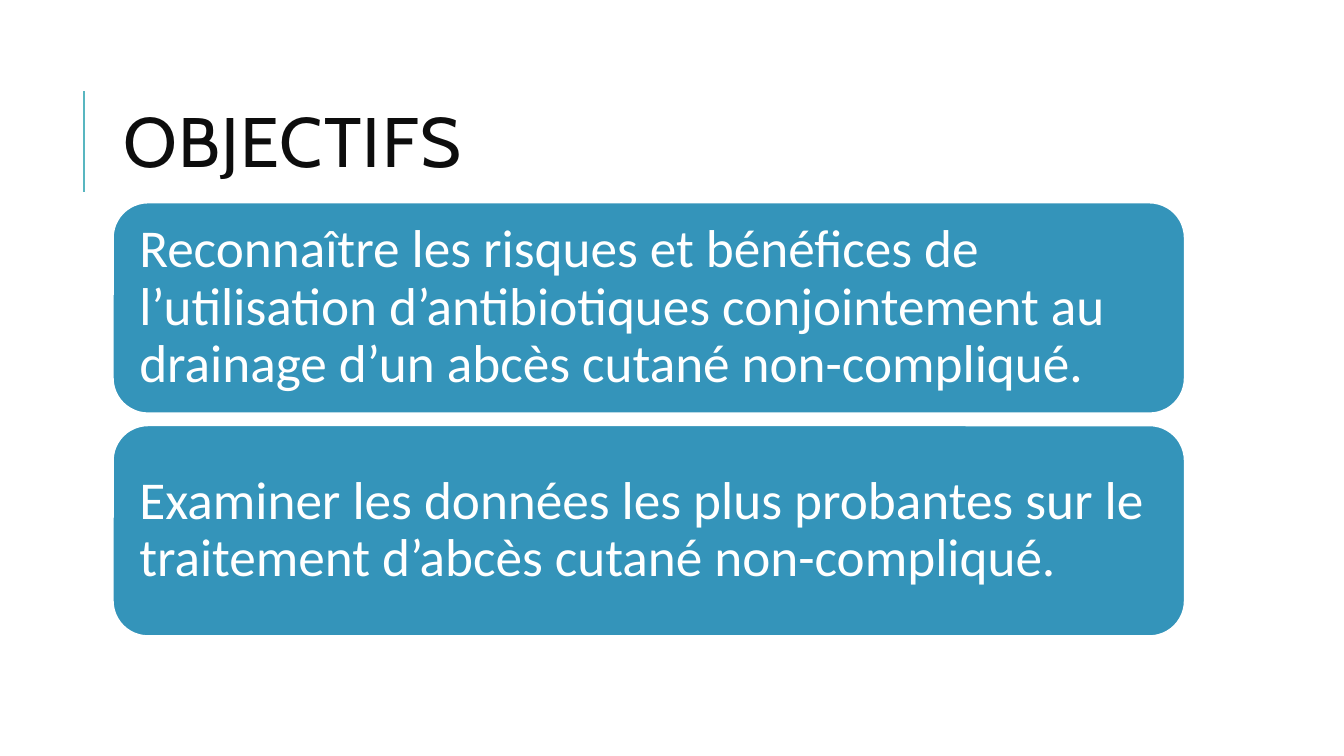
"""Build the objectives slide: a ruled title above two rounded cards."""

from dataclasses import dataclass

from lxml.etree import SubElement
from pptx import Presentation
from pptx.dml.color import RGBColor
from pptx.enum.shapes import MSO_CONNECTOR as Connector, MSO_SHAPE as Shape
from pptx.enum.text import MSO_ANCHOR as Anchor, PP_ALIGN as Align
from pptx.oxml.ns import qn
from pptx.util import Emu, Pt

EMU_PER_PX = 9144
COLOURS = {
    "ink": "0D0D0D",
    "rule": "58B6C0",
    "card": "3494BA",
    "white": "FFFFFF",
}
LEFT, WIDTH = 112, 1063
CARD_TOP, CARD_HEIGHT, CARD_STEP = 201, 209, 221


@dataclass
class Card:
    row: int
    text: str


CARDS = [
    Card(0, "Reconnaître les risques et bénéfices de l’utilisation d’antibiotiques "
            "conjointement au drainage d’un abcès cutané non-compliqué."),
    Card(1, "Examiner les données les plus probantes sur le traitement "
            "d’abcès cutané non-compliqué."),
]


def px(length: int) -> Emu:
    return Emu(length * EMU_PER_PX)


def colour(name: str) -> RGBColor:
    return RGBColor.from_string(COLOURS[name])


def write(box, text: str, *, font: str, size: int, ink: str, leading: float,
          inset: int = 10, tracking: int = 0) -> None:
    frame = box.text_frame
    frame.word_wrap = True
    frame.vertical_anchor = Anchor.MIDDLE
    frame.margin_left = frame.margin_right = px(inset)
    frame.margin_top = frame.margin_bottom = px(inset)
    para = frame.paragraphs[0]
    para.alignment = Align.LEFT
    para.line_spacing = leading
    span = para.add_run()
    span.text = text
    span.font.name = font
    span.font.size = Pt(size)
    span.font.color.rgb = colour(ink)
    if tracking:
        span.font._element.set("spc", str(tracking * 100))


def draw_title(page, text: str) -> None:
    title = page.shapes.title
    title.left, title.top = px(LEFT), px(64)
    title.width, title.height = px(WIDTH), px(164)
    write(title, text, font="Cabin", size=50, ink="ink", leading=0.8, tracking=1)


def draw_rule(page) -> None:
    rule = page.shapes.add_connector(Connector.STRAIGHT, px(83), px(190), px(83), px(90))
    rule.line.color.rgb = colour("rule")
    rule.line.width = Pt(1.5)
    SubElement(rule._element.spPr, qn("a:effectLst"))


def draw_card(page, card: Card) -> None:
    top = CARD_TOP + card.row * CARD_STEP
    box = page.shapes.add_shape(Shape.ROUNDED_RECTANGLE, px(LEFT), px(top),
                                px(WIDTH), px(CARD_HEIGHT))
    box.shadow.inherit = False
    box.fill.solid()
    box.fill.fore_color.rgb = colour("card")
    box.line.color.rgb = colour("white")
    box.line.width = Pt(1.25)
    write(box, card.text, font="Calibri", size=38, ink="white", leading=0.9, inset=16)


def main() -> None:
    deck = Presentation()
    deck.slide_width, deck.slide_height = px(1333), px(750)
    page = deck.slides.add_slide(deck.slide_layouts[5])
    page.background.fill.solid()
    page.background.fill.fore_color.rgb = colour("white")
    draw_rule(page)
    draw_title(page, "OBJECTIFS")
    for card in CARDS:
        draw_card(page, card)
    deck.save("out.pptx")


if __name__ == "__main__":
    main()
